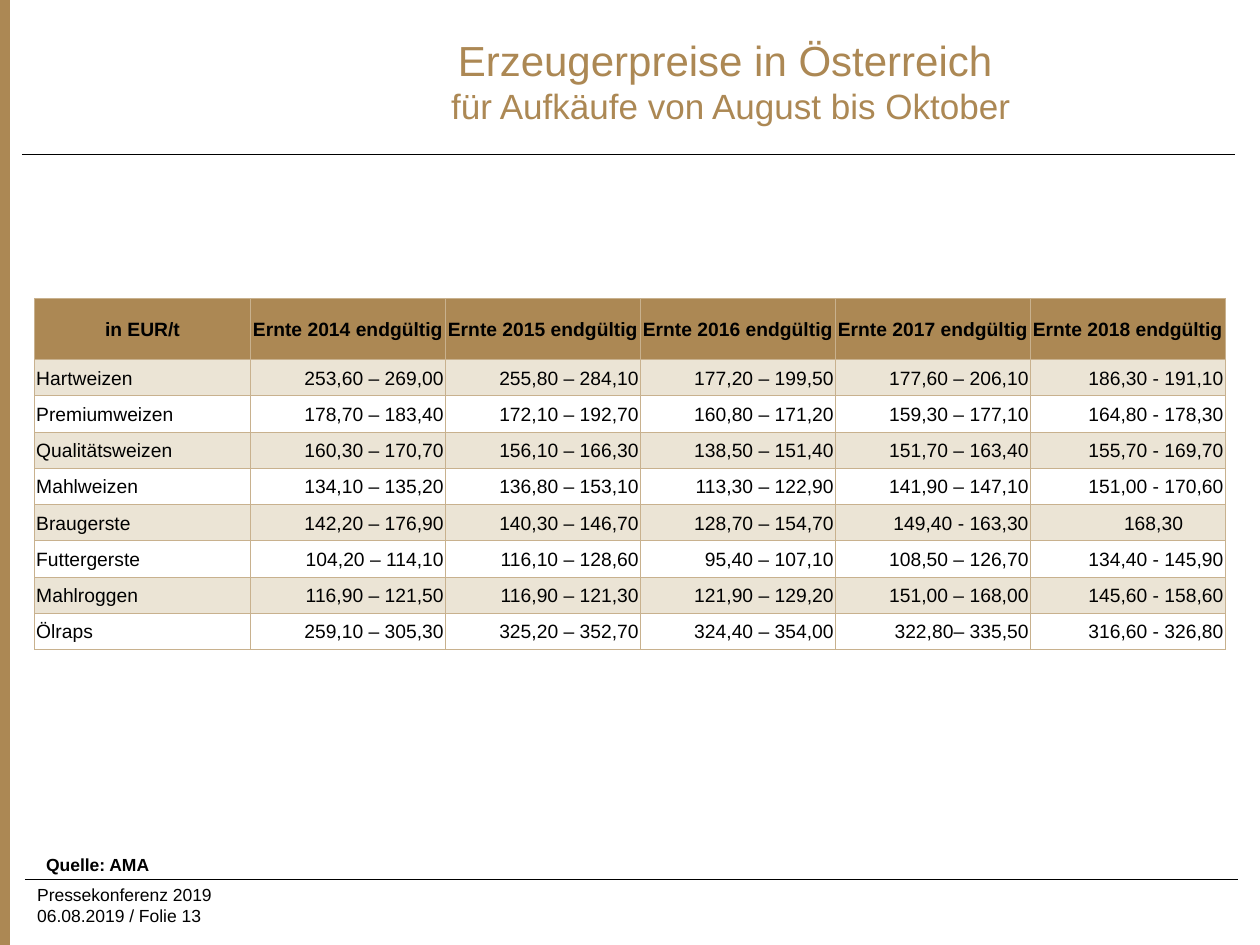
"""Build a slide with a table of Austrian producer prices."""
import copy
import pptx
import pptx.util
import pptx.dml.color
import pptx.enum.shapes
import pptx.enum.text
import lxml.etree

Cm, Pt = pptx.util.Cm, pptx.util.Pt
ALIGN = pptx.enum.text.PP_ALIGN
MIDDLE = pptx.enum.text.MSO_ANCHOR.MIDDLE
GOLD, SAND, PALE, BLACK = "AC8854", "C8B18E", "EBE4D5", "000000"
DRAW = "http://schemas.openxmlformats.org/drawingml/2006/main"


def tint(code):
    return pptx.dml.color.RGBColor.from_string(code)


def write(par, text, size=10, color=BLACK, bold=False, align=ALIGN.LEFT):
    par.alignment = align
    for num, line in enumerate(text.split("\n")):
        if num:
            par.add_line_break()
            par._p[-1].append(copy.deepcopy(run._r.rPr))
        run = par.add_run()
        run.text = line
        run.font.name = "Arial"
        run.font.size = Pt(size)
        run.font.bold = bold
        run.font.color.rgb = tint(color)


deck = pptx.Presentation()
deck.slide_width, deck.slide_height = Cm(25.4), Cm(19.05)
slide = deck.slides.add_slide(deck.slide_layouts[5])
shapes = slide.shapes

bar = shapes.add_shape(pptx.enum.shapes.MSO_SHAPE.RECTANGLE,
                       Cm(-0.03), Cm(0), Cm(0.23), Cm(19.05))
bar.shadow.inherit = False
bar.fill.solid()
bar.fill.fore_color.rgb = tint(GOLD)
bar.line.fill.background()

for left, right, top in ((0.44, 24.9, 3.12), (0.5, 24.96, 17.73)):
    rule = shapes.add_connector(pptx.enum.shapes.MSO_CONNECTOR.STRAIGHT,
                                Cm(left), Cm(top), Cm(right), Cm(top))
    rule.line.color.rgb = tint(BLACK)
    rule.line.width = Pt(0.75)
    lxml.etree.SubElement(rule._element.spPr, f"{{{DRAW}}}effectLst")

title = shapes.title
title.left, title.top, title.width, title.height = Cm(4.7), Cm(0.33), Cm(20.07), Cm(2.59)
frame = title.text_frame
frame.auto_size = pptx.enum.text.MSO_AUTO_SIZE.NONE
frame.vertical_anchor = MIDDLE
head = frame.paragraphs[0]
write(head, "Erzeugerpreise in Österreich \n", size=24, color=GOLD, align=ALIGN.CENTER)
write(head, "für Aufkäufe von August bis Oktober", size=20, color=GOLD, align=ALIGN.CENTER)

notes = (
    ("Pressekonferenz 2019\n06.08.2019 / Folie 13", False, 0.5, 17.7, 8.4, 1.02, 0.25, 0.13),
    ("Quelle: AMA", True, 0.7, 17.12, 24, 0.61, 0.23, 0.1),
)
for text, bold, left, top, width, height, side, edge in notes:
    frame = shapes.add_textbox(Cm(left), Cm(top), Cm(width), Cm(height)).text_frame
    frame.word_wrap = True
    frame.margin_left = frame.margin_right = Cm(side)
    frame.margin_top = frame.margin_bottom = Cm(edge)
    write(frame.paragraphs[0], text, bold=bold)

rows = [["in EUR/t"] + [f"Ernte {year} endgültig" for year in range(2014, 2019)]]
rows += [line.split("; ") for line in (
    "Hartweizen; 253,60 – 269,00; 255,80 – 284,10; 177,20 – 199,50; 177,60 – 206,10; 186,30 - 191,10",
    "Premiumweizen; 178,70 – 183,40; 172,10 – 192,70; 160,80 – 171,20; 159,30 – 177,10; 164,80 - 178,30",
    "Qualitätsweizen; 160,30 – 170,70; 156,10 – 166,30; 138,50 – 151,40; 151,70 – 163,40; 155,70 - 169,70",
    "Mahlweizen; 134,10 – 135,20; 136,80 – 153,10; 113,30 – 122,90; 141,90 – 147,10; 151,00 - 170,60",
    "Braugerste; 142,20 – 176,90; 140,30 – 146,70; 128,70 – 154,70; 149,40 - 163,30; 168,30",
    "Futtergerste; 104,20 – 114,10; 116,10 – 128,60; 95,40 – 107,10; 108,50 – 126,70; 134,40 - 145,90",
    "Mahlroggen; 116,90 – 121,50; 116,90 – 121,30; 121,90 – 129,20; 151,00 – 168,00; 145,60 - 158,60",
    "Ölraps; 259,10 – 305,30; 325,20 – 352,70; 324,40 – 354,00; 322,80– 335,50; 316,60 - 326,80",
)]
table = shapes.add_table(len(rows), 6, Cm(0.7), Cm(6.02), Cm(24), Cm(7.07)).table
table.first_row = table.horz_banding = False
for num, col in enumerate(table.columns):
    col.width = Cm(3.93 if num else 4.35)

for y, row in enumerate(rows):
    table.rows[y].height = Cm(0.73 if y else 1.23)
    for x, text in enumerate(row):
        cell = table.cell(y, x)
        cell.vertical_anchor = MIDDLE
        cell.margin_left = cell.margin_top = Cm(0.03)
        cell.margin_right = Cm(0.85 if text == "168,30" else 0.03)
        cell.margin_bottom = Cm(0)
        for side in ("lnL", "lnR", "lnT", "lnB"):
            edge = lxml.etree.SubElement(cell._tc.get_or_add_tcPr(),
                                         f"{{{DRAW}}}{side}", w=str(Pt(0.5)))
            fill = lxml.etree.SubElement(edge, f"{{{DRAW}}}solidFill")
            lxml.etree.SubElement(fill, f"{{{DRAW}}}srgbClr", val=SAND)
        if y == 0 or y % 2:
            cell.fill.solid()
            cell.fill.fore_color.rgb = tint(PALE if y else GOLD)
        else:
            cell.fill.background()
        align = ALIGN.CENTER if y == 0 else ALIGN.RIGHT if x else ALIGN.LEFT
        write(cell.text_frame.paragraphs[0], text, size=11, bold=y == 0, align=align)

deck.save("out.pptx")
